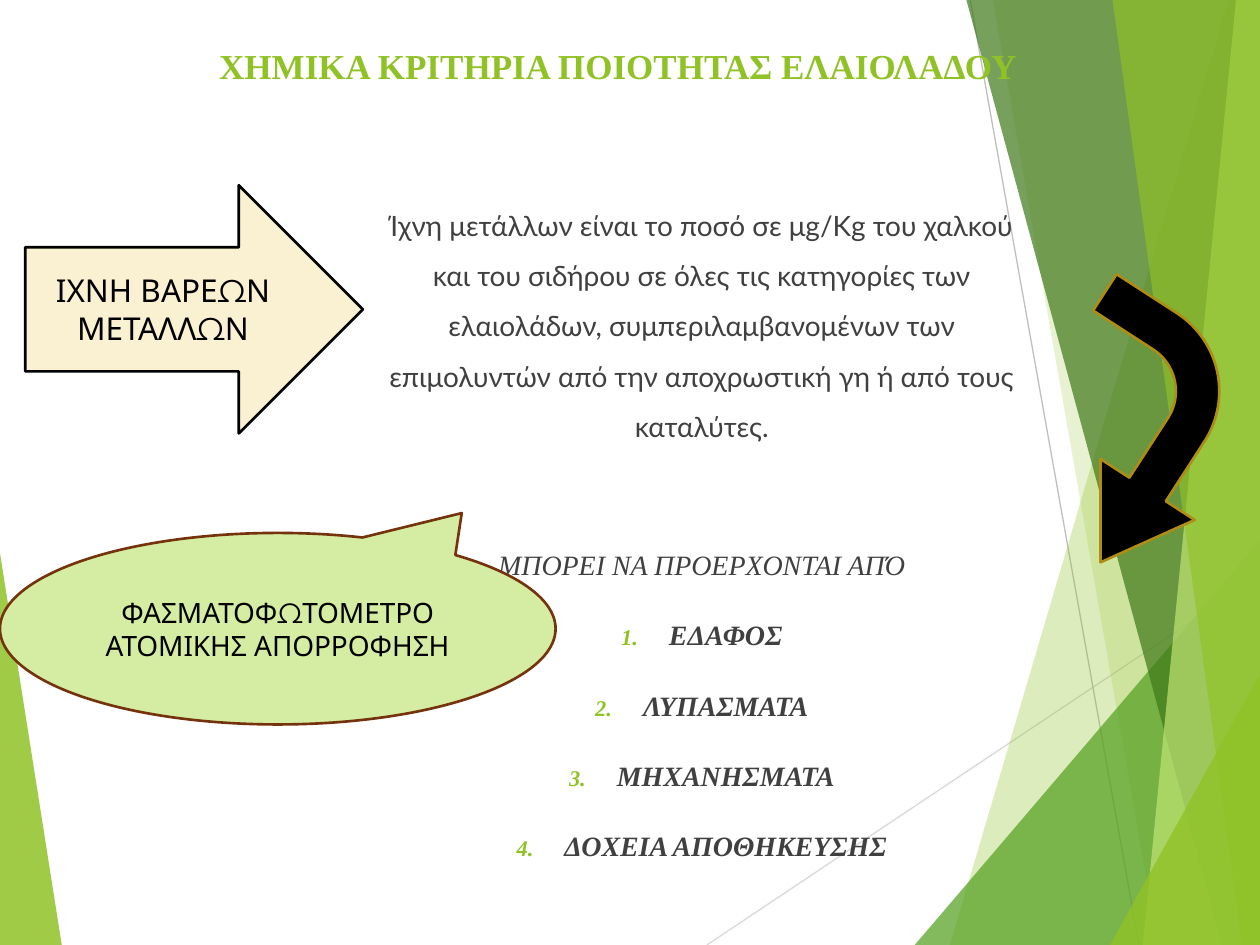
from lxml import etree
from pptx import Presentation
from pptx.dml.color import RGBColor
from pptx.enum.shapes import MSO_CONNECTOR, MSO_SHAPE
from pptx.enum.text import MSO_ANCHOR, PP_ALIGN
from pptx.oxml.ns import qn
from pptx.util import Inches, Pt

LIME = RGBColor(0x90, 0xC2, 0x26)
GREEN = RGBColor(0x54, 0xA0, 0x21)
DARK_GREEN = RGBColor(0x3F, 0x78, 0x19)
PALE_LIME = RGBColor(0xC0, 0xE4, 0x74)
LIGHT_GRAY = RGBColor(0xD9, 0xD9, 0xD9)
GRAY = RGBColor(0xBF, 0xBF, 0xBF)
TEXT_GRAY = RGBColor(0x40, 0x40, 0x40)
BLACK = RGBColor(0, 0, 0)
CREAM = RGBColor(0xFA, 0xF1, 0xD2)
GOLD = RGBColor(0xAF, 0x8C, 0x14)
MINT = RGBColor(0xD5, 0xED, 0xA2)
BROWN = RGBColor(0x74, 0x33, 0x0C)

prs = Presentation()
prs.slide_width, prs.slide_height = Inches(10), Inches(7.5)
s = prs.slides.add_slide(prs.slide_layouts[6])


def add_facet(points, color, alpha):
    """Draw a borderless polygon; alpha is its opacity in percent."""
    corners = [(Inches(x), Inches(y)) for x, y in points]
    fb = s.shapes.build_freeform(*corners[0])
    fb.add_line_segments(corners[1:], close=True)
    sp = fb.convert_to_shape()
    sp.shadow.inherit = False
    sp.fill.solid()
    sp.fill.fore_color.rgb = color
    sp.line.fill.background()
    clr = sp._element.spPr.find(".//" + qn("a:srgbClr"))
    etree.SubElement(clr, qn("a:alpha"), val=str(alpha * 1000))


def add_figure(kind, box, fill, line, adjustments=(), text="", size=16):
    sp = s.shapes.add_shape(kind, *map(Inches, box))
    sp.shadow.inherit = False
    for i, value in enumerate(adjustments):
        sp.adjustments[i] = value
    sp.fill.solid()
    sp.fill.fore_color.rgb = fill
    sp.line.color.rgb = line
    sp.line.width = Pt(1.5)
    if text:
        tf = sp.text_frame
        tf.word_wrap = True
        tf.vertical_anchor = MSO_ANCHOR.MIDDLE
        p = tf.paragraphs[0]
        p.text = text
        p.alignment = PP_ALIGN.CENTER
        p.font.name = "Montserrat"
        p.font.size = Pt(size)
        p.font.color.rgb = BLACK
    return sp


# Background facets
add_facet([(0, 4.39), (0.49, 7.5), (0, 7.5)], LIME, 85)

for x1, y1, x2, y2, color in [
    (5.61, 7.5, 10, 4.57, LIGHT_GRAY),
    (7.7, 0, 9.04, 7.5, GRAY),
]:
    line = s.shapes.add_connector(MSO_CONNECTOR.STRAIGHT, *map(Inches, (x1, y1, x2, y2)))
    line.line.color.rgb = color
    line.line.width = Pt(0.75)
    etree.SubElement(line._element.spPr, qn("a:effectLst"))

# Each right-hand facet runs from its top-left and bottom-left corners to the slide edge
for top_x, top_y, bottom_x, color, alpha in [
    (9.75, 0, 7.54, LIME, 30),
    (7.88, 0, 9.19, LIME, 20),
    (10, 4.29, 7.26, GREEN, 72),
    (7.67, 0, 9.7, DARK_GREEN, 70),
    (9.81, 0, 9.07, PALE_LIME, 70),
    (8.83, 0, 9.86, LIME, 65),
    (10, 5.35, 8.81, LIME, 80),
]:
    add_facet([(top_x, top_y), (bottom_x, 7.5), (10, 7.5), (10, top_y)], color, alpha)

# Title
tf = s.shapes.add_textbox(Inches(1.14), Inches(0.3), Inches(7.53), Inches(0.79)).text_frame
tf.word_wrap = True
p = tf.paragraphs[0]
p.text = "ΧΗΜΙΚΑ ΚΡΙΤΗΡΙΑ ΠΟΙΟΤΗΤΑΣ ΕΛΑΙΟΛΑΔΟΥ"
p.alignment = PP_ALIGN.CENTER
p.font.name = "Times New Roman"
p.font.size = Pt(20)
p.font.bold = True
p.font.color.rgb = LIME

# Definition and numbered sources
tf = s.shapes.add_textbox(Inches(2.87), Inches(1.47), Inches(5.4), Inches(5.51)).text_frame
tf.word_wrap = True
definition = (
    "Ίχνη μετάλλων είναι το ποσό σε μg/Kg του χαλκού και του σιδήρου σε όλες τις "
    "κατηγορίες των ελαιολάδων, συμπεριλαμβανομένων των επιμολυντών από την "
    "αποχρωστική γη ή από τους καταλύτες."
)
lead_in = "ΜΠΟΡΕΙ ΝΑ ΠΡΟΕΡΧΟΝΤΑΙ ΑΠΌ"
sources = ["ΕΔΑΦΟΣ", "ΛΥΠΑΣΜΑΤΑ", "ΜΗΧΑΝΗΣΜΑΤΑ", "ΔΟΧΕΙΑ ΑΠΟΘΗΚΕΥΣΗΣ"]
for i, text in enumerate([definition, lead_in, *sources]):
    p = tf.paragraphs[0] if i == 0 else tf.add_paragraph()
    p.text = text
    p.alignment = PP_ALIGN.CENTER
    p.line_spacing = 1.5
    p.space_before = Pt((0, 50)[i] if i < 2 else 11.4)
    p.font.name = "Times New Roman" if i else "Lato"
    p.font.size = Pt(16)
    p.font.italic = i > 0
    p.font.bold = i > 1
    p.font.color.rgb = TEXT_GRAY
    if text in sources:
        pPr = p._p.get_or_add_pPr()
        pPr.set("marL", str(Inches(0.38)))
        pPr.set("indent", str(Inches(-0.38)))
        bullet = [
            etree.Element(qn("a:buClr")),
            etree.Element(qn("a:buSzPct"), val="80000"),
            etree.Element(qn("a:buAutoNum"), type="arabicPeriod"),
        ]
        etree.SubElement(bullet[0], qn("a:srgbClr"), val=str(LIME))
        for element in bullet:
            pPr.find(qn("a:defRPr")).addprevious(element)

# Arrows and callout
add_figure(MSO_SHAPE.RIGHT_ARROW, (0.2, 1.47, 2.68, 1.97), CREAM, BLACK,
           text="ΙΧΝΗ ΒΑΡΕΩΝ ΜΕΤΑΛΛΩΝ", size=18)
bent_arrow = add_figure(MSO_SHAPE.BENT_ARROW, (7.99, 2.65, 1.99, 1.58), BLACK, GOLD,
                        (0.218, 0.282, 0.436, 0.467))
bent_arrow.rotation = 122.9
add_figure(MSO_SHAPE.OVAL_CALLOUT, (0, 4.23, 4.41, 1.52), MINT, BROWN, (0.331, -0.604),
           "ΦΑΣΜΑΤΟΦΩΤΟΜΕΤΡΟ ΑΤΟΜΙΚΗΣ ΑΠΟΡΡΟΦΗΣΗ")

prs.save("out.pptx")
